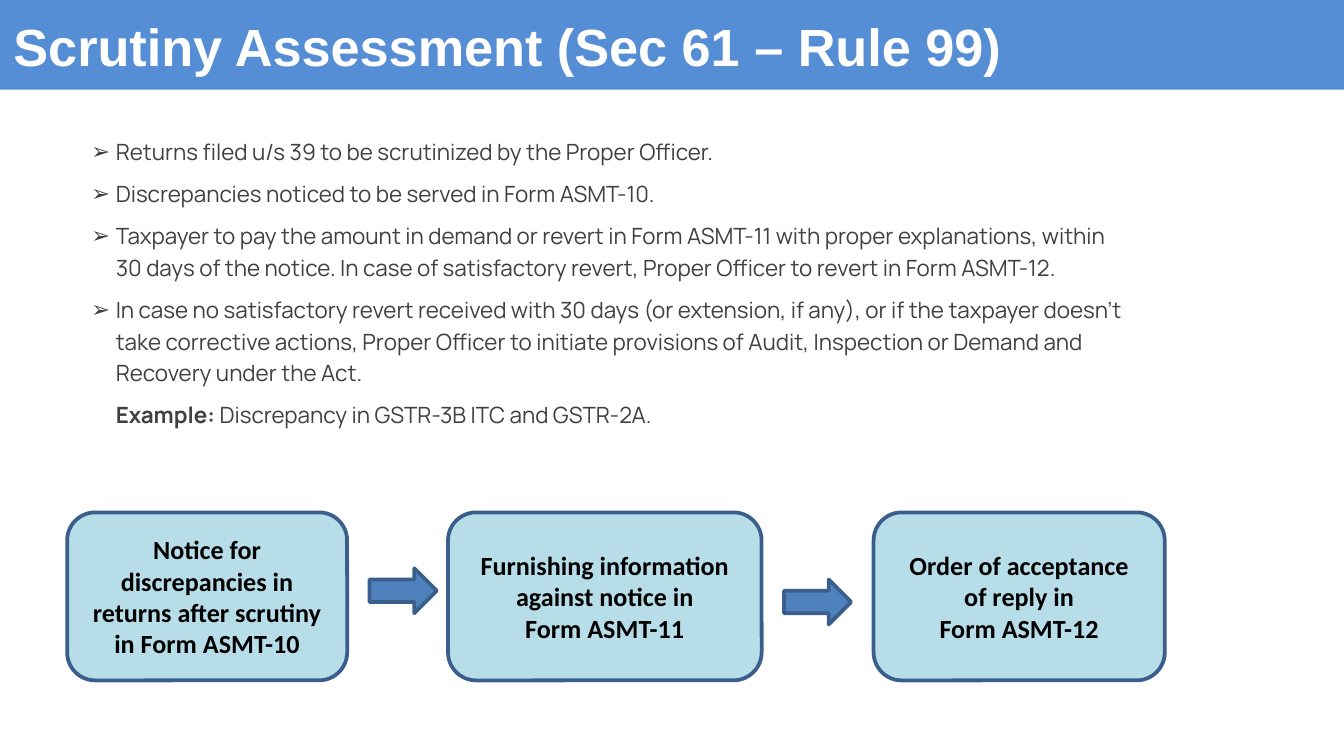
from lxml import etree
from pptx import Presentation
from pptx.dml.color import RGBColor
from pptx.enum import shapes, text
from pptx.oxml.ns import qn
from pptx.util import Pt

THEME = {
    "banner": "558ED5", "banner_text": "FFFFFF", "body_text": "404040",
    "step": "B7DEE8", "step_text": "000000", "arrow": "4F81BD", "outline": "3A5F8C",
    "title_size": 28, "body_size": 12, "step_size": 14, "line_width": 2,
}


def color(name):
    return RGBColor.from_string(THEME[name])


def write(p, words, font, size, fill, bold=False):
    """Add words to a paragraph; a newline becomes a line break."""
    for i, line in enumerate(words.split("\n")):
        if i:
            p.add_line_break()
        r = p.add_run()
        r.text = line
        r.font.name, r.font.size, r.font.bold = font, Pt(THEME[size]), bold
        r.font.color.rgb = color(fill)


def add_block(s, kind, left, top, width, height, fill):
    sp = s.shapes.add_shape(kind, Pt(left), Pt(top), Pt(width), Pt(height))
    sp.shadow.inherit = False
    sp.fill.solid()
    sp.fill.fore_color.rgb = color(fill)
    sp.line.color.rgb = color("outline")
    sp.line.width = Pt(THEME["line_width"])
    return sp


prs = Presentation()
prs.slide_width, prs.slide_height = Pt(720), Pt(405)
s = prs.slides.add_slide(prs.slide_layouts[1])
title, body = s.shapes.title, s.placeholders[1]

# Title banner
title.left, title.top, title.width, title.height = Pt(0), Pt(-1.5), Pt(720), Pt(49.5)
title.fill.solid()
title.fill.fore_color.rgb = color("banner")
tf = title.text_frame
tf.auto_size = text.MSO_AUTO_SIZE.NONE
tf.vertical_anchor = text.MSO_ANCHOR.MIDDLE
tf.margin_top = Pt(6)
p = tf.paragraphs[0]
p.alignment = text.PP_ALIGN.LEFT
write(p, "Scrutiny Assessment (Sec 61 – Rule 99)", "Arial", "title_size", "banner_text", bold=True)

# Bullet list: (bold lead, words); a paragraph with a lead has no bullet
points = [
    ("", "Returns filed u/s 39 to be scrutinized by the Proper Officer."),
    ("", "Discrepancies noticed to be served in Form ASMT-10."),
    ("", "Taxpayer to pay the amount in demand or revert in Form ASMT-11 with proper explanations, within\n"
         "30 days of the notice. In case of satisfactory revert, Proper Officer to revert in Form ASMT-12."),
    ("", "In case no satisfactory revert received with 30 days (or extension, if any), or if the taxpayer doesn’t\n"
         "take corrective actions, Proper Officer to initiate provisions of Audit, Inspection or Demand and\n"
         "Recovery under the Act."),
    ("Example:", " Discrepancy in GSTR-3B ITC and GSTR-2A."),
]
body.left, body.top, body.width, body.height = Pt(18), Pt(52.5), Pt(676), Pt(200)
tf = body.text_frame
tf.auto_size = text.MSO_AUTO_SIZE.NONE
tf.vertical_anchor = text.MSO_ANCHOR.TOP
tf.margin_left, tf.margin_top = Pt(31), Pt(19)
for i, (lead, words) in enumerate(points):
    p = tf.add_paragraph() if i else tf.paragraphs[0]
    p.line_spacing = Pt(17)
    p.space_before = Pt(5.5 if i else 0)
    pPr = p._p.get_or_add_pPr()
    pPr.set("marL", str(Pt(13)))
    pPr.set("indent", str(Pt(0 if lead else -13)))
    if lead:
        etree.SubElement(pPr, qn("a:buNone"))
        write(p, lead, "Manrope", "body_size", "body_text", bold=True)
    else:
        etree.SubElement(pPr, qn("a:buFont")).set("typeface", "Arial")
        etree.SubElement(pPr, qn("a:buChar")).set("char", "➢")
    write(p, words, "Manrope", "body_size", "body_text")

# Process steps: left, width, lines
steps = [
    (36, 150, ["Notice for", "discrepancies in", "returns after scrutiny in Form ASMT-10"]),
    (240, 168, ["Furnishing information", "against notice in", "Form ASMT-11"]),
    (468, 156, ["Order of acceptance", "of reply in", "Form ASMT-12"]),
]
for left, width, lines in steps:
    sp = add_block(s, shapes.MSO_SHAPE.ROUNDED_RECTANGLE, left, 274.5, width, 90, "step")
    tf = sp.text_frame
    tf.word_wrap = True
    tf.vertical_anchor = text.MSO_ANCHOR.MIDDLE
    for i, line in enumerate(lines):
        p = tf.add_paragraph() if i else tf.paragraphs[0]
        p.alignment = text.PP_ALIGN.CENTER
        write(p, line, "Calibri", "step_size", "step_text", bold=True)

# Arrows between the steps
for left, top in [(198, 304.5), (420, 310.5)]:
    add_block(s, shapes.MSO_SHAPE.RIGHT_ARROW, left, top, 36, 24, "arrow")

prs.save("out.pptx")
